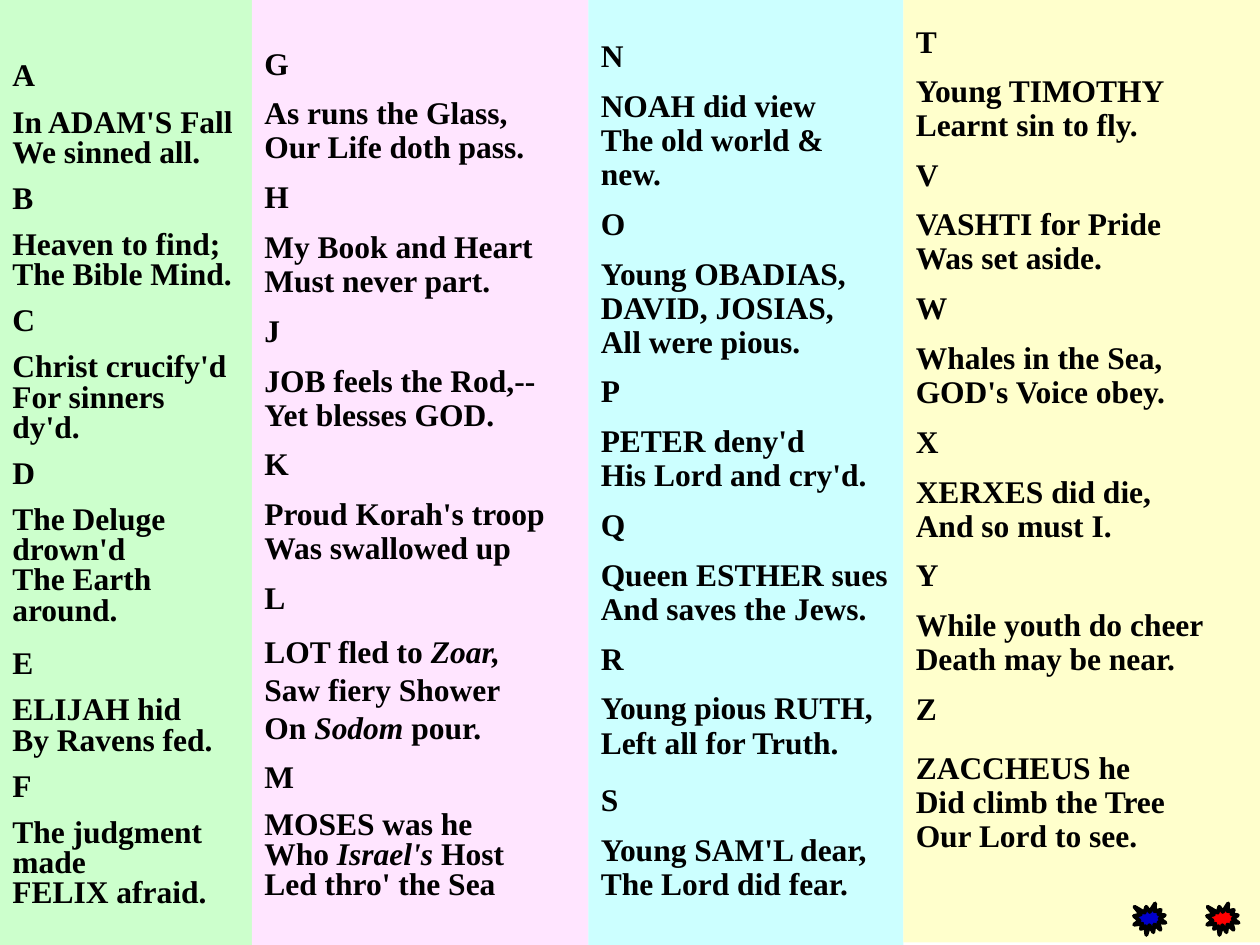
import pptx
import pptx.dml.color
import pptx.enum.shapes
import pptx.enum.text
import pptx.util

Inches, Pt = pptx.util.Inches, pptx.util.Pt
SHAPE = pptx.enum.shapes.MSO_SHAPE

# Rhymes by letter; *asterisks* enclose italics
COLUMNS = [
    dict(left=0, width=2, height=7.51, fill="CCFFCC", top=0.41, spacing=0.8, rhymes=[
        ("A", "In ADAM'S Fall\nWe sinned all."),
        ("B", "Heaven to find;\nThe Bible Mind."),
        ("C", "Christ crucify'd\nFor sinners dy'd."),
        ("D", "The Deluge drown'd\nThe Earth around."),
        ("E", "ELIJAH hid\nBy Ravens fed."),
        ("F", "The judgment made\nFELIX afraid."),
    ]),
    dict(left=2, width=2.67, height=7.5, fill="FFE5FF", top=0.35, spacing=0.9, rhymes=[
        ("G", "As runs the Glass,\nOur Life doth pass."),
        ("H", "My Book and Heart\nMust never part."),
        ("J", "JOB feels the Rod,--\nYet blesses GOD."),
        ("K", "Proud Korah's troop\nWas swallowed up"),
        ("L", "LOT fled to *Zoar,*\nSaw fiery Shower\nOn *Sodom* pour."),
        ("M", "MOSES was he\nWho *Israel's* Host\nLed thro' the Sea"),
    ]),
    dict(left=4.67, width=2.5, height=7.51, fill="CCFFFF", top=0.32, spacing=0.9, rhymes=[
        ("N", "NOAH did view\nThe old world & new."),
        ("O", "Young OBADIAS,\nDAVID, JOSIAS,\nAll were pious."),
        ("P", "PETER deny'd\nHis Lord and cry'd."),
        ("Q", "Queen ESTHER sues\nAnd saves the Jews."),
        ("R", "Young pious RUTH,\nLeft all for Truth."),
        ("S", "Young SAM'L dear,\nThe Lord did fear."),
    ]),
    dict(left=7.17, width=2.83, height=7.48, fill="FFFFCC", top=0.26, spacing=0.9, rhymes=[
        ("T", "Young TIMOTHY\nLearnt sin to fly."),
        ("V", "VASHTI for Pride\nWas set aside."),
        ("W", "Whales in the Sea,\nGOD's Voice obey."),
        ("X", "XERXES did die,\nAnd so must I."),
        ("Y", "While youth do cheer\nDeath may be near."),
        ("Z", "ZACCHEUS he\nDid climb the Tree\nOur Lord to see."),
    ]),
]
# Line spacing that departs from the column's own
LETTER_SPACING = {"A": 1.1, "E": 1.0, "G": 1.0, "S": 1.1, "T": 0.7}
VERSE_SPACING = {"L": 1.0, "M": 0.8}
VERSE_GAP = {"Z": 14}
GAP = 9
SEALS = [(9.58, "FF0000"), (9, "0000CC")]


def rgb(color):
    return pptx.dml.color.RGBColor.from_string(color)


def add_filled(s, kind, box, fill):
    sp = s.shapes.add_shape(kind, *[Inches(v) for v in box])
    sp.shadow.inherit = False
    sp.fill.solid()
    sp.fill.fore_color.rgb = rgb(fill)
    return sp


def write(p, text, spacing, gap):
    p.alignment = pptx.enum.text.PP_ALIGN.LEFT
    p.line_spacing = float(spacing)
    p.space_before = Pt(gap)
    for n, line in enumerate(text.split("\n")):
        if n:
            p.add_line_break()
        for i, part in enumerate(line.split("*")):
            if not part:
                continue
            r = p.add_run()
            r.text = part
            r.font.name = "Times New Roman"
            r.font.size = Pt(18)
            r.font.bold = True
            r.font.italic = i % 2 == 1
            r.font.color.rgb = rgb("000000")


prs = pptx.Presentation()
prs.slide_width, prs.slide_height = Inches(10), Inches(7.5)
s = prs.slides.add_slide(prs.slide_layouts[6])

# Alphabet columns
for col in COLUMNS:
    box = (col["left"], 0, col["width"], col["height"])
    sp = add_filled(s, SHAPE.RECTANGLE, box, col["fill"])
    sp.line.fill.background()
    tf = sp.text_frame
    tf.word_wrap = True
    tf.vertical_anchor = pptx.enum.text.MSO_ANCHOR.TOP
    tf.margin_top = Inches(col["top"])
    for i, (letter, verse) in enumerate(col["rhymes"]):
        p = tf.add_paragraph() if i else tf.paragraphs[0]
        write(p, letter, LETTER_SPACING.get(letter, col["spacing"]), GAP if i else 0)
        write(tf.add_paragraph(), verse, VERSE_SPACING.get(letter, col["spacing"]),
              VERSE_GAP.get(letter, GAP))

# Burst markers
for left, color in SEALS:
    sp = add_filled(s, SHAPE.EXPLOSION1, (left, 7.17, 0.25, 0.25), color)
    sp.line.color.rgb = rgb("000000")
    sp.line.width = Pt(2.25)

prs.save("out.pptx")
